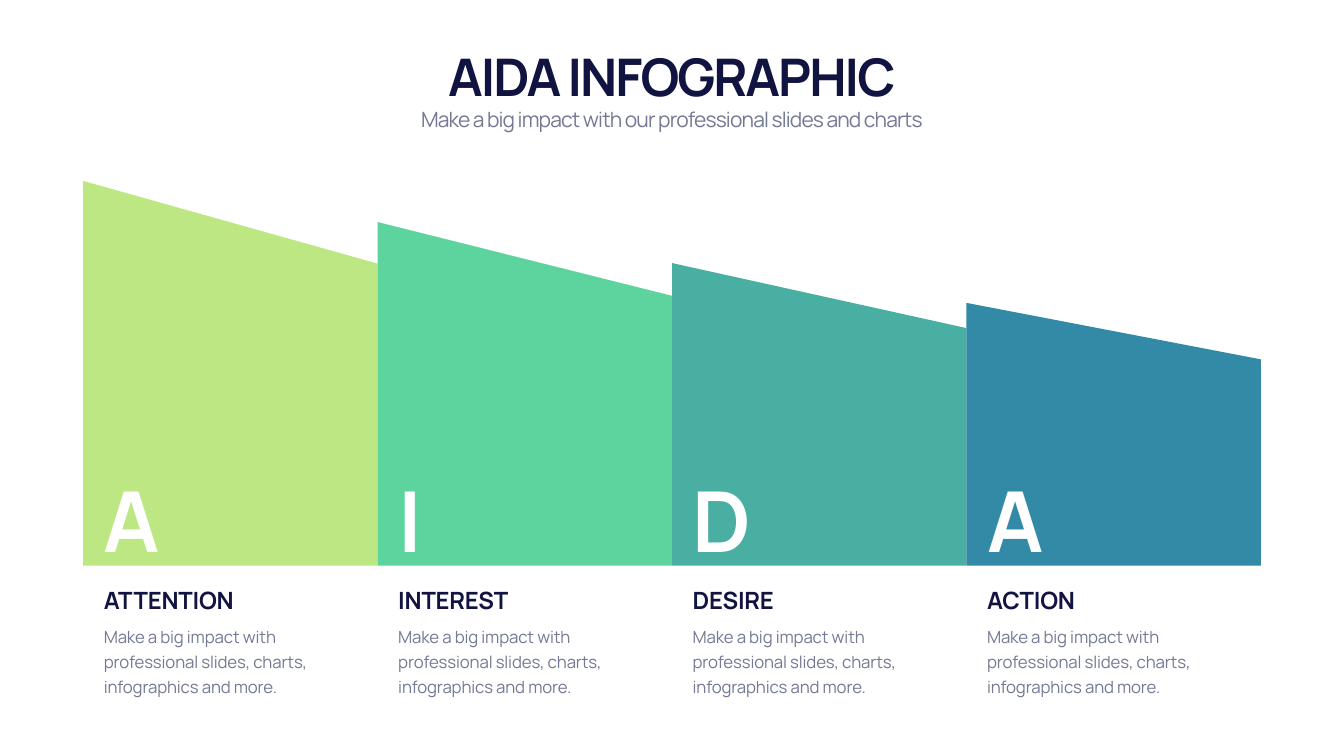
from dataclasses import dataclass

from pptx import Presentation
from pptx.dml.color import RGBColor
from pptx.enum.text import MSO_ANCHOR, MSO_AUTO_SIZE, PP_ALIGN
from pptx.util import Pt

TOP, BOTTOM = MSO_ANCHOR.TOP, MSO_ANCHOR.BOTTOM
LEFT, CENTER = PP_ALIGN.LEFT, PP_ALIGN.CENTER
GROW = MSO_AUTO_SIZE.SHAPE_TO_FIT_TEXT


@dataclass(frozen=True)
class Theme:
    """Font, colours and type sizes of the slide."""
    font: str = "Manrope"
    dark: str = "111340"
    grey: str = "747994"
    white: str = "FFFFFF"
    title: int = 74
    subtitle: int = 30
    letter: int = 120
    heading: int = 34
    body: int = 24


THEME = Theme()
BODY = "Make a big impact with professional slides, charts, infographics and more."
STAGES = [
    ("ATTENTION", "BCE783", 258.5, 376.6),
    ("INTEREST", "5DD39E", 317.2, 422.6),
    ("DESIRE", "49AFA3", 375.8, 468.7),
    ("ACTION", "338AA7", 432.7, 513.4),
]


def add_text(s, text, box, *, size, color, bold=False, align=LEFT,
             anchor=TOP, spacing=-0.3, line=None):
    """Add one formatted paragraph in a box given in points."""
    sp = s.shapes.add_textbox(*map(Pt, box))
    tf = sp.text_frame
    tf.word_wrap = True
    tf.auto_size = GROW
    tf.vertical_anchor = anchor
    p = tf.paragraphs[0]
    p.alignment = align
    if line:
        p.line_spacing = Pt(line)
    r = p.add_run()
    r.text = text
    r.font.name = THEME.font
    r.font.size = Pt(size)
    r.font.bold = bold
    r.font.color.rgb = RGBColor.from_string(color)
    r.font._element.set("spc", str(round(spacing * 100)))


def add_header(s, x, y, w):
    """Place the centred title and subtitle from the top of the given box."""
    add_text(s, "AIDA INFOGRAPHIC", (x, y, w, 97.2), size=THEME.title,
             color=THEME.dark, bold=True, align=CENTER, anchor=BOTTOM, spacing=-2.9)
    add_text(s, "Make a big impact with our professional slides and charts",
             (x, y + 90, w, 44), size=THEME.subtitle, color=THEME.grey,
             align=CENTER, spacing=-1.2)


def add_block(s, x, w, base, left_top, right_top, color):
    """Draw a block with a slanted top edge standing on the base line."""
    fb = s.shapes.build_freeform(Pt(x + w), Pt(base))
    corners = [(x, base), (x, left_top), (x + w, right_top)]
    fb.add_line_segments([(Pt(a), Pt(b)) for a, b in corners], close=True)
    sp = fb.convert_to_shape()
    sp.shadow.inherit = False
    sp.fill.solid()
    sp.fill.fore_color.rgb = RGBColor.from_string(color)
    sp.line.fill.background()


def add_stage(s, x, w, base, stage):
    """Place one stage: block, initial letter, heading and description."""
    name, color, left_top, right_top = stage
    add_block(s, x, w, base, left_top, right_top, color)
    tx, tw = x + 22.4, 324
    add_text(s, name, (tx, base + 24.4, tw, 48.2), size=THEME.heading,
             color=THEME.dark, bold=True, anchor=BOTTOM)
    add_text(s, BODY, (tx, base + 76.2, tw, 114.5), size=THEME.body,
             color=THEME.grey, spacing=-0.2, line=36)
    add_text(s, name[0], (tx, base - 143.4, 157.7, 152.6), size=THEME.letter,
             color=THEME.white, bold=True, anchor=BOTTOM)


def add_stages(s, x, w, base):
    """Share the width equally between the stages."""
    step = w / len(STAGES)
    for i, stage in enumerate(STAGES):
        add_stage(s, x + i * step, step, base, stage)


def main():
    """Build and save the slide."""
    prs = Presentation()
    prs.slide_width, prs.slide_height = Pt(1919.52), Pt(1080)
    s = prs.slides.add_slide(prs.slide_layouts[6])
    add_stages(s, 118.8, 1682, 808)
    add_header(s, 119.5, 59, 1679.8)
    prs.save("out.pptx")


if __name__ == "__main__":
    main()
